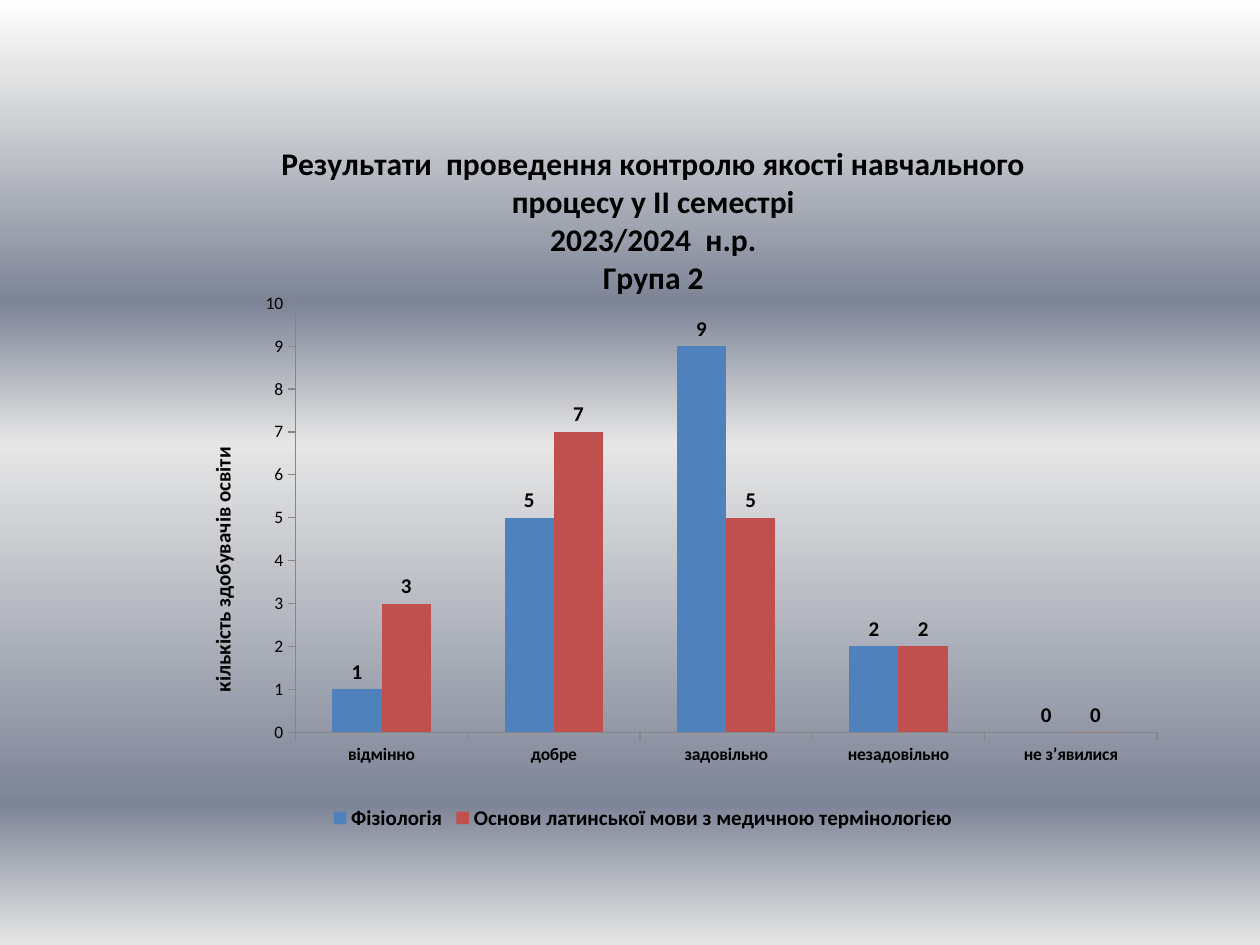
from lxml.etree import SubElement
from pptx import Presentation
from pptx.chart.data import CategoryChartData
from pptx.dml.color import RGBColor
from pptx.enum.chart import XL_CHART_TYPE as ChartType
from pptx.enum.chart import XL_LABEL_POSITION as LabelPosition
from pptx.enum.chart import XL_LEGEND_POSITION as LegendPosition
from pptx.enum.chart import XL_TICK_MARK as TickMark
from pptx.oxml import parse_xml
from pptx.oxml.ns import nsdecls, qn
from pptx.util import Inches, Pt

COLORS = {"text": "000000", "axis": "868686"}
BACKGROUND_STOPS = [(0, "FFFFFF"), (7, "E6E6E6"), (32, "7D8496"),
                    (47, "E6E6E6"), (85, "7D8496"), (100, "E6E6E6")]
TITLE_LINES = [
    "Результати  проведення контролю якості навчального",
    "процесу у ІІ семестрі",
    "2023/2024  н.р.",
    "Група 2",
]
AXIS_TITLE = "кількість здобувачів освіти"
CATEGORIES = ["відмінно", "добре", "задовільно", "незадовільно", "не з’явилися"]
SERIES = [
    ("Фізіологія", (1, 5, 9, 2, 0), "4F81BD"),
    ("Основи латинської мови з медичною термінологією", (3, 7, 5, 2, 0), "C0504D"),
]
CHART_BOX = (0.96, 0.87, 8.29, 5.76)


def style_font(font, size, bold=False):
    values = {"name": "Calibri", "size": Pt(size), "bold": bold}
    for name, value in values.items():
        setattr(font, name, value)
    font.color.rgb = RGBColor.from_string(COLORS["text"])


def place(element, **values):
    """Give a chart part a manual layout, in fractions of the chart."""
    for old in element.findall(qn("c:layout")):
        element.remove(old)
    layout = parse_xml(f"<c:layout {nsdecls('c')}><c:manualLayout/></c:layout>")
    for name, value in values.items():
        SubElement(layout[0], qn(f"c:{name}")).set("val", str(value))
    text = element.find(qn("c:tx"))
    element.insert(0 if text is None else 1, layout)


def write_title(title, lines, size, x, y):
    frame = title.text_frame
    for index, line in enumerate(lines):
        paragraph = frame.add_paragraph() if index else frame.paragraphs[0]
        run = paragraph.add_run()
        run.text = line
        style_font(run.font, size, bold=True)
    place(title._element, xMode="edge", yMode="edge", x=x, y=y)


presentation = Presentation()
presentation.slide_width, presentation.slide_height = Inches(10), Inches(7.5)
slide = presentation.slides.add_slide(presentation.slide_layouts[6])

# Background: vertical gradient with several stops
fill = slide.background.fill
fill.gradient()
fill.gradient_angle = 270
stop_list = slide.background._cSld.find(".//" + qn("a:gsLst"))
for stop in list(stop_list):
    stop_list.remove(stop)
for position, color in BACKGROUND_STOPS:
    stop = SubElement(stop_list, qn("a:gs"), pos=str(position * 1000))
    SubElement(stop, qn("a:srgbClr"), val=color)

# Chart
data = CategoryChartData(number_format="General")
data.categories = CATEGORIES
for name, values, color in SERIES:
    data.add_series(name, values)
chart = slide.shapes.add_chart(
    ChartType.COLUMN_CLUSTERED, *map(Inches, CHART_BOX), data).chart
style_font(chart.font, 10)
place(chart._chartSpace.chart.plotArea, layoutTarget="inner", xMode="edge",
      yMode="edge", x=0.167, y=0.267, w=0.825, h=0.591)

# Columns and value labels
plot = chart.plots[0]
plot.gap_width, plot.overlap, plot.vary_by_categories = 150, 0, False
for series, (name, values, color) in zip(plot.series, SERIES):
    series.format.fill.solid()
    series.format.fill.fore_color.rgb = RGBColor.from_string(color)
    labels = series.data_labels
    labels.show_value = True
    labels.position = LabelPosition.OUTSIDE_END
    style_font(labels.font, 12, bold=True)

# Axes
value_axis, category_axis = chart.value_axis, chart.category_axis
for axis, bold in ((value_axis, False), (category_axis, True)):
    axis.has_major_gridlines = False
    axis.major_tick_mark = TickMark.CROSS if axis is value_axis else TickMark.OUTSIDE
    axis.major_tick_mark = TickMark.OUTSIDE
    axis.format.line.color.rgb = RGBColor.from_string(COLORS["axis"])
    axis.format.line.width = Pt(0.75)
    style_font(axis.tick_labels.font, 10, bold)
value_axis.minimum_scale, value_axis.maximum_scale, value_axis.major_unit = 0, 10, 1

# Titles
write_title(value_axis.axis_title, [AXIS_TITLE], 12, 0.08, 0.46)
write_title(chart.chart_title, TITLE_LINES, 18, 0.15, 0.04)
chart.chart_title._element.find(qn("c:overlay")).set("val", "1")

# Legend
chart.has_legend = True
chart.legend.position = LegendPosition.BOTTOM
chart.legend.include_in_layout = False
style_font(chart.legend.font, 12, bold=True)

presentation.save("out.pptx")
